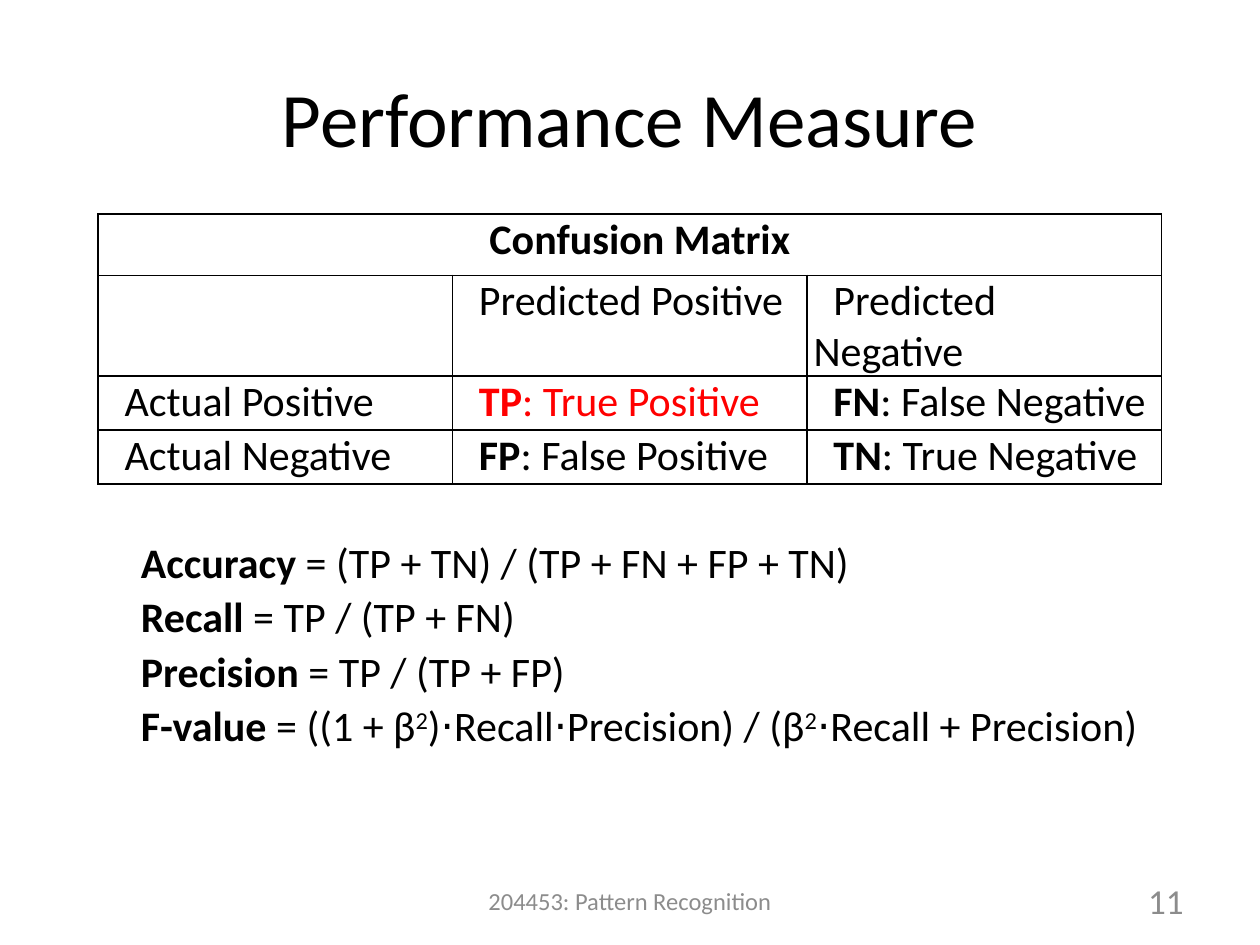
from lxml import etree
from pptx import Presentation
from pptx.dml.color import RGBColor
from pptx.enum.text import MSO_ANCHOR as Anchor, PP_ALIGN as Align
from pptx.oxml.ns import qn
from pptx.util import Cm, Pt

BLACK, RED, GREY = "000000", "FF0000", "8C8C8C"
BOLD = {"bold": True}
RAISED = {"raised": True}
MATRIX = [
    [[("Confusion Matrix", BOLD)], [], []],
    [[], [("Predicted Positive", {})], [("Predicted Negative", {})]],
    [
        [("Actual Positive", {})],
        [("TP", {"bold": True, "color": RED}), (": True Positive", {"color": RED})],
        [("FN", BOLD), (": False Negative", {})],
    ],
    [
        [("Actual Negative", {})],
        [("FP", BOLD), (": False Positive", {})],
        [("TN", BOLD), (": True Negative", {})],
    ],
]
FORMULAS = [
    [[("Accuracy", BOLD), (" = (TP + TN) / (TP + FN + FP + TN)", {})]],
    [[("Recall ", BOLD), ("= TP / (TP + FN)", {})]],
    [[("Precision", BOLD), (" = TP / (TP + FP)", {})]],
    [[
        ("F-value ", BOLD), ("= ((1 + β", {}), ("2", RAISED),
        (")⋅Recall⋅Precision) / (β", {}), ("2", RAISED),
        ("⋅Recall + Precision)", {}),
    ]],
    [[]],
    [[]],
]


def rgb(value):
    """Turn a hex string into a colour."""
    return RGBColor.from_string(value)


def add_span(para, text, size, color=BLACK, bold=False, raised=False):
    """Append one formatted run to a paragraph."""
    span = para.add_run()
    span.text = text
    for name, value in {"name": "Calibri", "size": Pt(size), "bold": bold}.items():
        setattr(span.font, name, value)
    span.font.color.rgb = rgb(color)
    if raised:
        span._r.get_or_add_rPr().set("baseline", "30000")


def add_label(page, box, text, size, align, color=BLACK):
    """Place a single line of vertically centred text."""
    frame = page.shapes.add_textbox(*map(Cm, box)).text_frame
    frame.word_wrap = True
    frame.vertical_anchor = Anchor.MIDDLE
    para = frame.paragraphs[0]
    para.alignment = align
    add_span(para, text, size, color)


def set_borders(cell, widths):
    """Draw the four cell edges, leaving out those of zero width."""
    props = cell._tc.get_or_add_tcPr()
    for place, (side, width) in enumerate(widths.items()):
        line = etree.Element(qn(f"a:ln{side}"), w=str(Pt(width)))
        if width:
            fill = etree.SubElement(line, qn("a:solidFill"))
            etree.SubElement(fill, qn("a:srgbClr"), val=BLACK)
        else:
            etree.SubElement(line, qn("a:noFill"))
        props.insert(place, line)


def fill_cell(cell, spans, left, indent):
    """Write the spans into an unfilled cell."""
    margins = {"margin_left": 0.13, "margin_right": 0.13, "margin_top": 0, "margin_bottom": 0}
    for name, value in margins.items():
        setattr(cell, name, Cm(value))
    cell.fill.background()
    para = cell.text_frame.paragraphs[0]
    props = para._p.get_or_add_pPr()
    props.set("marL", str(Cm(left)))
    props.set("indent", str(Cm(indent)))
    for text, style in spans:
        add_span(para, text, 24, **style)


def add_grid(page, box, rows, heights, left=0, edge=0, inner=0):
    """Place a plain table with equal columns and the given row heights."""
    grid = page.shapes.add_table(len(rows), len(rows[0]), *map(Cm, box)).table
    grid.first_row = grid.horz_banding = False
    last = len(rows) - 1
    for i, (row, height) in enumerate(zip(rows, heights)):
        grid.rows[i].height = Cm(height)
        for j, spans in enumerate(row):
            cell = grid.cell(i, j)
            fill_cell(cell, spans, left, 0.4)
            set_borders(cell, {
                "L": inner, "R": inner,
                "T": inner if i else edge, "B": inner if i < last else edge,
            })
    return grid


def add_matrix(page, box):
    """Place the confusion matrix with its merged heading."""
    grid = add_grid(page, box, MATRIX, [1.23, 1.23, 1.09, 1.09], edge=1.5, inner=1)
    heading = grid.cell(0, 0)
    heading.merge(grid.cell(0, 2))
    heading.text_frame.paragraphs[0].alignment = Align.CENTER


def add_formulas(page, box):
    """Place the borderless list of measures."""
    add_grid(page, box, FORMULAS, [1.1] * len(FORMULAS), left=0.4)


def add_footer(page, box):
    """Place the course name and the page number on one line."""
    left, top, width, height = box
    number = 5.93
    add_label(page, box, "204453: Pattern Recognition", 14, Align.CENTER, GREY)
    add_label(page, (left + width - number, top, number, height), "11", 20, Align.RIGHT, GREY)


def main():
    """Build the slide and save it."""
    deck = Presentation()
    deck.slide_width, deck.slide_height = Cm(25.4), Cm(19.05)
    page = deck.slides.add_slide(deck.slide_layouts[6])
    add_label(page, (1.27, 0.76, 22.86, 3.18), "Performance Measure", 44, Align.CENTER)
    add_matrix(page, (1.98, 4.32, 21.44, 4.64))
    add_formulas(page, (1.91, 10.85, 21.59, 6.6))
    add_footer(page, (1.29, 17.65, 22.82, 1.02))
    deck.save("out.pptx")


if __name__ == "__main__":
    main()
